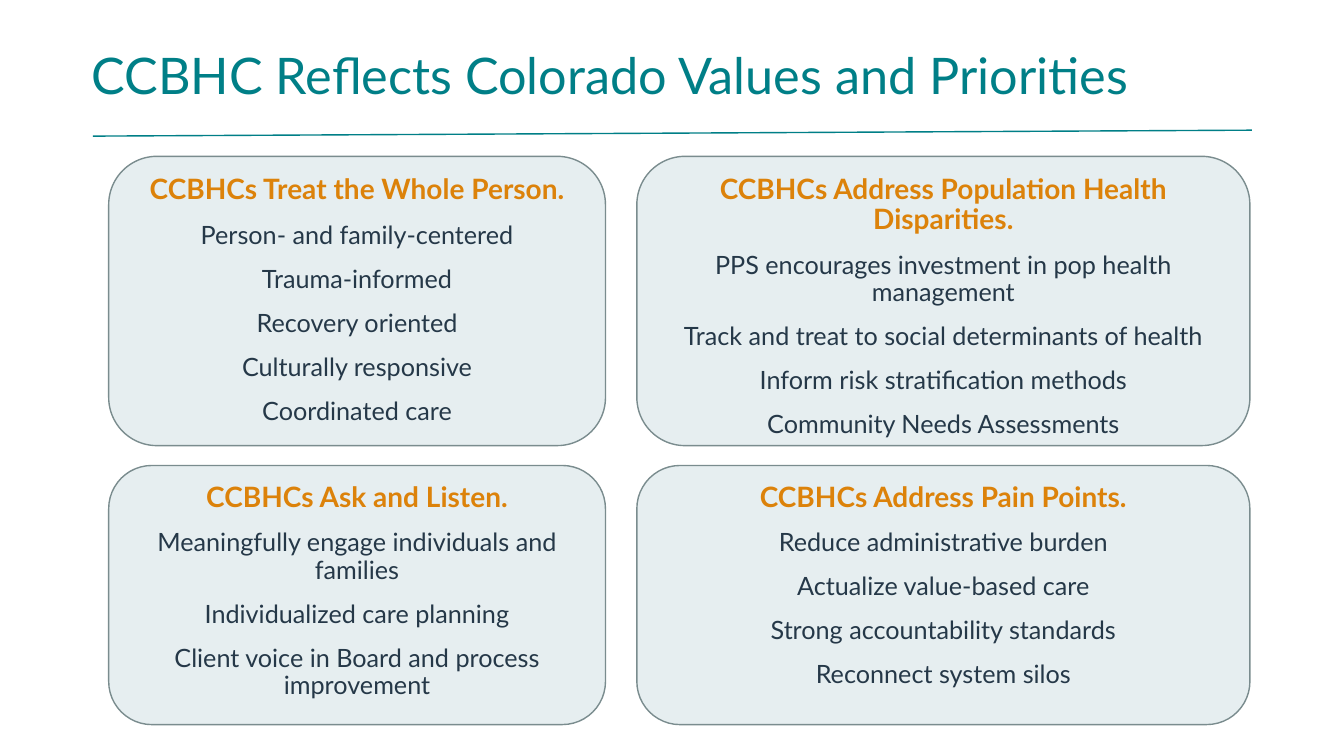
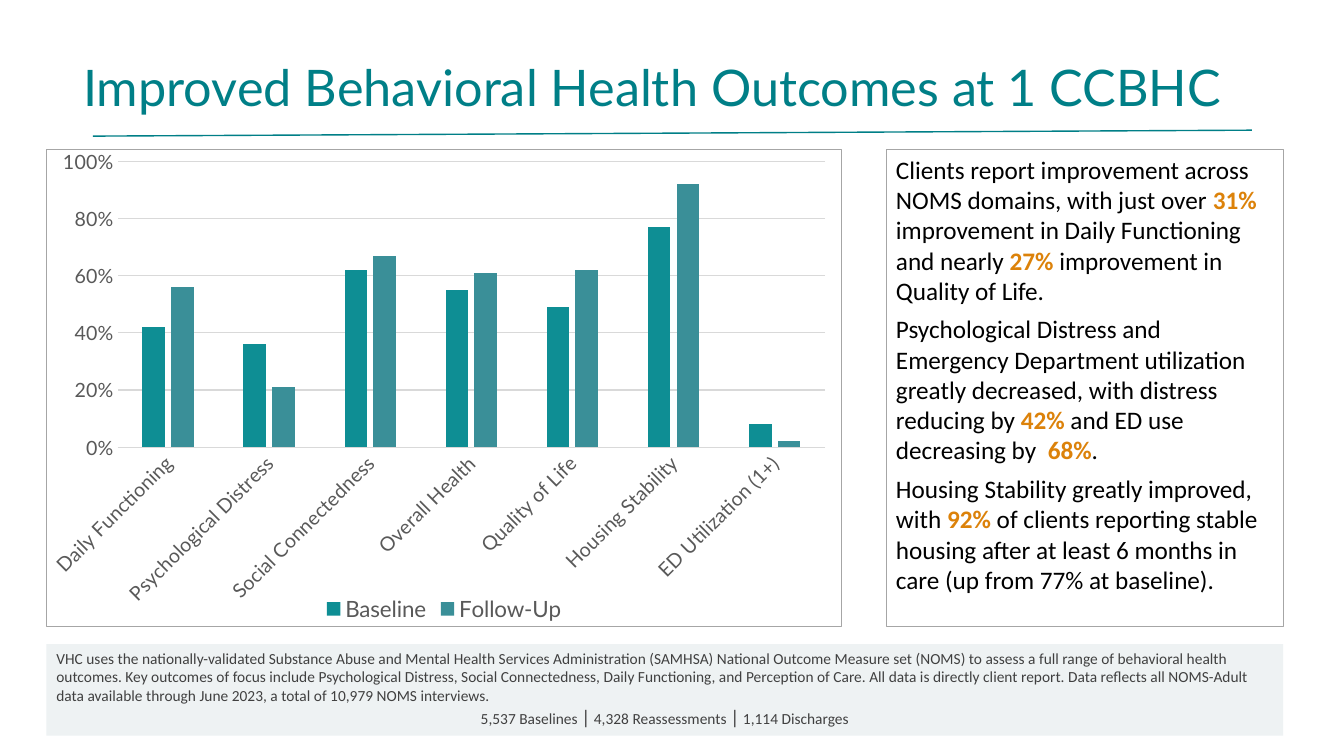
"""Build two slides on CCBHC values and client outcomes."""
from lxml import etree
from pptx import Presentation
from pptx.chart.data import CategoryChartData
from pptx.dml.color import RGBColor
from pptx.enum.chart import XL_CHART_TYPE, XL_LEGEND_POSITION, XL_TICK_MARK
from pptx.enum.shapes import MSO_CONNECTOR, MSO_SHAPE
from pptx.enum.text import MSO_ANCHOR, PP_ALIGN
from pptx.oxml import parse_xml
from pptx.oxml.ns import nsdecls, qn
from pptx.util import Cm, Pt

TEAL = RGBColor(0x00, 0x7F, 0x87)
ORANGE = RGBColor(0xDC, 0x82, 0x0A)
NAVY = RGBColor(0x25, 0x38, 0x48)
BLACK = RGBColor(0x00, 0x00, 0x00)
WHITE = RGBColor(0xFF, 0xFF, 0xFF)
CARD_FILL = RGBColor(0xE6, 0xEE, 0xF0)
CARD_LINE = RGBColor(0x7A, 0x8C, 0x8E)
NOTE_FILL = RGBColor(0xEE, 0xF2, 0xF3)
NOTE_TEXT = RGBColor(0x40, 0x40, 0x40)
FRAME = RGBColor(0xA6, 0xA6, 0xA6)
GRID = RGBColor(0xD9, 0xD9, 0xD9)
AXIS_TEXT = RGBColor(0x59, 0x59, 0x59)
HEAD_FONT, BODY_FONT = "Lato", "Calibri"

VALUES_TITLE = "CCBHC Reflects Colorado Values and Priorities"
CARD_ROWS = [
    [
        ("CCBHCs Treat the Whole Person.",
         ["Person- and family-centered", "Trauma-informed", "Recovery oriented",
          "Culturally responsive", "Coordinated care"]),
        ("CCBHCs Address Population Health Disparities.",
         ["PPS encourages investment in pop health management",
          "Track and treat to social determinants of health",
          "Inform risk stratification methods", "Community Needs Assessments"]),
    ],
    [
        ("CCBHCs Ask and Listen.",
         ["Meaningfully engage individuals and families",
          "Individualized care planning",
          "Client voice in Board and process improvement"]),
        ("CCBHCs Address Pain Points.",
         ["Reduce administrative burden", "Actualize value-based care",
          "Strong accountability standards", "Reconnect system silos"]),
    ],
]
CARD_COLS = [(2.74, 12.52), (16.05, 15.45)]
CARD_BANDS = [(3.94, 7.29), (11.73, 6.53)]

OUTCOMES_TITLE = "Improved Behavioral Health Outcomes at 1 CCBHC"
OUTCOMES = [
    ("Daily Functioning", 0.42, 0.56),
    ("Psychological Distress", 0.36, 0.21),
    ("Social Connectedness", 0.62, 0.67),
    ("Overall Health", 0.55, 0.61),
    ("Quality of Life", 0.49, 0.62),
    ("Housing Stability", 0.77, 0.92),
    ("ED Utilization (1+)", 0.08, 0.02),
]
SERIES = [("Baseline", RGBColor(0x0E, 0x8E, 0x94)),
          ("Follow-Up", RGBColor(0x3A, 0x8F, 0x98))]
PLOT_BOX = {"x": 0.089, "y": 0.025, "w": 0.891, "h": 0.599}
FINDINGS = [
    "Clients report improvement across NOMS domains, with just over *31% *improvement "
    "in Daily Functioning and nearly *27% *improvement in Quality of Life.",
    "Psychological Distress and Emergency Department utilization greatly decreased, "
    "with distress reducing by *42%* and ED use decreasing by  *68%*.",
    "Housing Stability greatly improved, with *92%* of clients reporting stable "
    "housing after at least 6 months in care (up from 77% at baseline).",
]
SOURCE_NOTE = (
    "VHC uses the nationally-validated Substance Abuse and Mental Health Services "
    "Administration (SAMHSA) National Outcome Measure set (NOMS) to assess a full range "
    "of behavioral health outcomes. Key outcomes of focus include Psychological Distress, "
    "Social Connectedness, Daily Functioning, and Perception of Care. All data is directly "
    "client report. Data reflects all NOMS-Adult data available through June 2023, a total "
    "of 10,979 NOMS interviews.")
SAMPLE_NOTE = "5,537 Baselines *|* 4,328 Reassessments *|* 1,114 Discharges"
CHART_BOX = (1.17, 3.76, 20.04, 12.04)
FINDINGS_BOX = (22.33, 3.76, 10.01, 12.04)
NOTE_BOX = (1.17, 16.23, 31.17, 2.31)


def style_font(font, name, size, color, bold=False):
    font.name, font.size, font.bold = name, Pt(size), bold
    font.color.rgb = color


def add_slide(prs, title, box):
    s = prs.slides.add_slide(prs.slide_layouts[6])
    rule = s.shapes.add_connector(
        MSO_CONNECTOR.STRAIGHT, Cm(2.34), Cm(3.43), Cm(31.55), Cm(3.28))
    rule.line.color.rgb = TEAL
    rule.line.width = Pt(1)
    etree.SubElement(rule._element.spPr, qn("a:effectLst"))
    tf = s.shapes.add_textbox(*map(Cm, box)).text_frame
    tf.word_wrap = True
    tf.vertical_anchor = MSO_ANCHOR.MIDDLE
    p = tf.paragraphs[0]
    p.text = title
    p.line_spacing = 0.9
    style_font(p.font, HEAD_FONT, 36, TEAL)
    return s


def add_panel(s, kind, box, fill, line=None, width=1):
    sp = s.shapes.add_shape(kind, *map(Cm, box))
    sp.shadow.inherit = False
    sp.fill.solid()
    sp.fill.fore_color.rgb = fill
    if line is None:
        sp.line.fill.background()
    else:
        sp.line.color.rgb = line
        sp.line.width = Pt(width)
    tf = sp.text_frame
    tf.word_wrap = True
    tf.vertical_anchor = MSO_ANCHOR.TOP
    return tf


def add_paragraph(tf, align, after=0):
    p = tf.paragraphs[0] if not tf.text else tf.add_paragraph()
    p.alignment = align
    p.space_after = Pt(after)
    return p


def add_marked_runs(p, text, mark):
    for i, part in enumerate(text.split("*")):
        r = p.add_run()
        r.text = part
        if i % 2:
            mark(r.font)


def mark_figure(font):
    font.bold = True
    font.color.rgb = ORANGE


def mark_divider(font):
    font.size = Pt(14)


def add_card(s, box, heading, points):
    tf = add_panel(s, MSO_SHAPE.ROUNDED_RECTANGLE, box, CARD_FILL, CARD_LINE)
    for i, text in enumerate([heading, *points]):
        p = add_paragraph(tf, PP_ALIGN.CENTER, 12)
        p.text = text
        p.line_spacing = 0.9
        if i == 0:
            style_font(p.font, HEAD_FONT, 20, ORANGE, True)
        else:
            style_font(p.font, HEAD_FONT, 18, NAVY)


def frame_chart(chart):
    space = chart._chartSpace
    space.find(qn("c:chart")).addnext(parse_xml(
        f'<c:spPr {nsdecls("c", "a")}>'
        f'<a:solidFill><a:srgbClr val="{WHITE}"/></a:solidFill>'
        f'<a:ln w="{Pt(0.75)}"><a:solidFill><a:srgbClr val="{FRAME}"/></a:solidFill></a:ln>'
        '</c:spPr>'))
    plot_area = space.find(".//" + qn("c:plotArea"))
    for old in plot_area.findall(qn("c:layout")):
        plot_area.remove(old)
    modes = '<c:xMode val="edge"/><c:yMode val="edge"/>'
    sizes = "".join(f'<c:{k} val="{v}"/>' for k, v in PLOT_BOX.items())
    plot_area.insert(0, parse_xml(
        f'<c:layout {nsdecls("c")}><c:manualLayout><c:layoutTarget val="inner"/>'
        f'{modes}{sizes}</c:manualLayout></c:layout>'))


def add_outcome_chart(s):
    data = CategoryChartData(number_format="0%")
    names, *columns = zip(*OUTCOMES)
    data.categories = names
    for (name, _), values in zip(SERIES, columns):
        data.add_series(name, values)
    chart = s.shapes.add_chart(
        XL_CHART_TYPE.COLUMN_CLUSTERED, *map(Cm, CHART_BOX), data).chart
    style_font(chart.font, HEAD_FONT, 14, BLACK)
    chart.has_title = False
    chart.has_legend = True
    chart.legend.position = XL_LEGEND_POSITION.BOTTOM
    chart.legend.include_in_layout = False
    style_font(chart.legend.font, HEAD_FONT, 16, AXIS_TEXT)
    plot = chart.plots[0]
    plot.gap_width, plot.overlap, plot.vary_by_categories = 219, -27, False
    for series, (_, color) in zip(plot.series, SERIES):
        series.format.fill.solid()
        series.format.fill.fore_color.rgb = color
    cat, val = chart.category_axis, chart.value_axis
    for axis in (cat, val):
        axis.major_tick_mark = axis.minor_tick_mark = XL_TICK_MARK.NONE
        style_font(axis.tick_labels.font, HEAD_FONT, 14, AXIS_TEXT)
    cat._element.find(".//" + qn("a:bodyPr")).set("rot", "-2700000")
    val.minimum_scale, val.maximum_scale, val.major_unit = 0, 1, 0.2
    val.tick_labels.number_format = "0%"
    val.tick_labels.number_format_is_linked = False
    val.format.line.fill.background()
    for line in (cat.format.line, val.major_gridlines.format.line):
        line.color.rgb = GRID
        line.width = Pt(0.75)
    frame_chart(chart)


def build_values(prs):
    s = add_slide(prs, VALUES_TITLE, (2.06, 0.69, 31.45, 2.57))
    for (top, height), row in zip(CARD_BANDS, CARD_ROWS):
        for (left, width), (heading, points) in zip(CARD_COLS, row):
            add_card(s, (left, top, width, height), heading, points)


def build_outcomes(prs):
    s = add_slide(prs, OUTCOMES_TITLE, (1.85, 0.79, 29.85, 2.97))
    tf = add_panel(s, MSO_SHAPE.RECTANGLE, NOTE_BOX, NOTE_FILL)
    for text, align in ((SOURCE_NOTE, PP_ALIGN.LEFT), (SAMPLE_NOTE, PP_ALIGN.CENTER)):
        p = add_paragraph(tf, align)
        add_marked_runs(p, text, mark_divider)
        style_font(p.font, BODY_FONT, 11, NOTE_TEXT)
    add_outcome_chart(s)
    tf = add_panel(s, MSO_SHAPE.RECTANGLE, FINDINGS_BOX, WHITE, FRAME, 0.75)
    for text in FINDINGS:
        p = add_paragraph(tf, PP_ALIGN.LEFT, 6)
        add_marked_runs(p, text, mark_figure)
        style_font(p.font, BODY_FONT, 18, BLACK)


def main():
    prs = Presentation()
    prs.slide_width, prs.slide_height = Cm(33.87), Cm(19.05)
    build_values(prs)
    build_outcomes(prs)
    prs.save("out.pptx")


if __name__ == "__main__":
    main()
